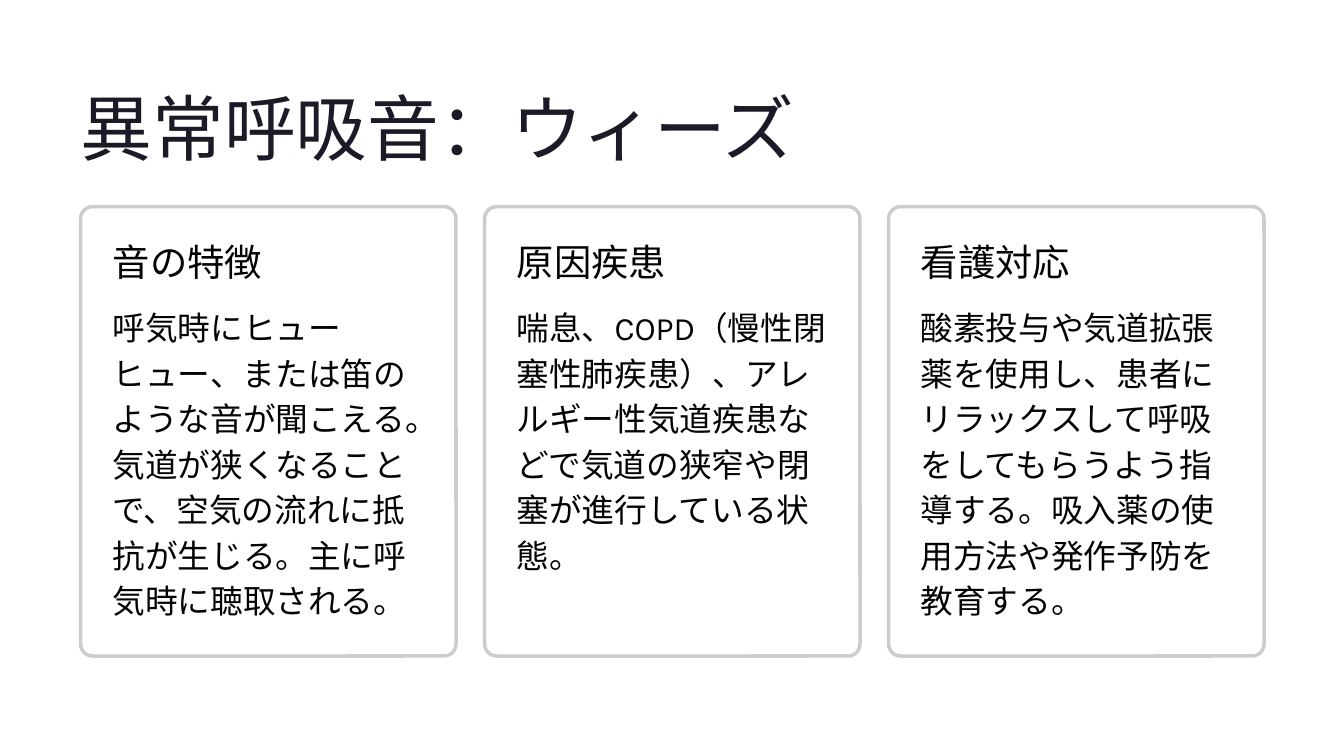
from lxml.etree import SubElement
from pptx import Presentation
from pptx.dml.color import RGBColor as RGB
from pptx.enum.shapes import MSO_SHAPE as SHAPE
from pptx.oxml.ns import qn
from pptx.util import Pt

TITLE = "異常呼吸音：ウィーズ"
# heading, body, height of the body box
CARDS = [
    ("音の特徴",
     "呼気時にヒューヒュー、または笛のような音が聞こえる。"
     "気道が狭くなることで、空気の流れに抵抗が生じる。主に呼気時に聴取される。", 276.5),
    ("原因疾患",
     "喘息、COPD（慢性閉塞性肺疾患）、アレルギー性気道疾患などで"
     "気道の狭窄や閉塞が進行している状態。", 197.3),
    ("看護対応",
     "酸素投与や気道拡張薬を使用し、患者にリラックスして呼吸をしてもらうよう指導する。"
     "吸入薬の使用方法や発作予防を教育する。", 236.9),
]
COLORS = {"title": "1B1B27", "text": "030303", "card": "FFFFFF", "border": "CCCCCC"}
FORMATS = {
    "title": {"font": "Inter", "size": 61.5, "spacing": 77, "color": "title", "wrap": False},
    "heading": {"font": "Inter", "size": 32, "spacing": 38.5, "color": "text", "wrap": False},
    "body": {"font": "Karla", "size": 28, "spacing": 39, "color": "text", "wrap": True},
}

SLIDE_W, SLIDE_H = 1152, 648
LEFT, CARD_TOP = 69.1, 177.1
CARD_W, CARD_H, STEP = 321.8, 385.2, 346.3
PAD = 27.5
TEXT_W = CARD_W - 2 * PAD
HEADING_TOP, BODY_TOP = 205.2, 258.5


def color(name):
    return RGB.from_string(COLORS[name])


def add_text(slide, text, style, x, y, w, h):
    fmt = FORMATS[style]
    tf = slide.shapes.add_textbox(Pt(x), Pt(y), Pt(w), Pt(h)).text_frame
    for side in ("left", "top", "right", "bottom"):
        setattr(tf, f"margin_{side}", 0)
    tf.word_wrap = fmt["wrap"]
    p = tf.paragraphs[0]
    p.line_spacing = Pt(fmt["spacing"])
    r = p.add_run()
    r.text = text
    for name, value in {"name": fmt["font"], "size": Pt(fmt["size"])}.items():
        setattr(r.font, name, value)
    r.font.color.rgb = color(fmt["color"])


def add_card(slide, x):
    sp = slide.shapes.add_shape(
        SHAPE.ROUNDED_RECTANGLE, Pt(x), Pt(CARD_TOP), Pt(CARD_W), Pt(CARD_H))
    sp.adjustments[0] = 0.032
    sp.shadow.inherit = False
    sp.fill.solid()
    sp.fill.fore_color.rgb = color("card")
    rgb = sp.fill._xPr.find(qn("a:solidFill")).find(qn("a:srgbClr"))
    SubElement(rgb, qn("a:alpha"), val="95000")
    sp.line.color.rgb = color("border")
    sp.line.width = Pt(3)


def main():
    prs = Presentation()
    prs.slide_width, prs.slide_height = Pt(SLIDE_W), Pt(SLIDE_H)
    slide = prs.slides.add_slide(prs.slide_layouts[6])
    add_text(slide, TITLE, "title", LEFT, 68.4, 617, 77)
    for i, (heading, body, body_h) in enumerate(CARDS):
        x = LEFT + i * STEP
        add_card(slide, x)
        add_text(slide, heading, "heading", x + PAD, HEADING_TOP, TEXT_W, 38.9)
        add_text(slide, body, "body", x + PAD, BODY_TOP, TEXT_W, body_h)
    prs.save("out.pptx")


if __name__ == "__main__":
    main()
